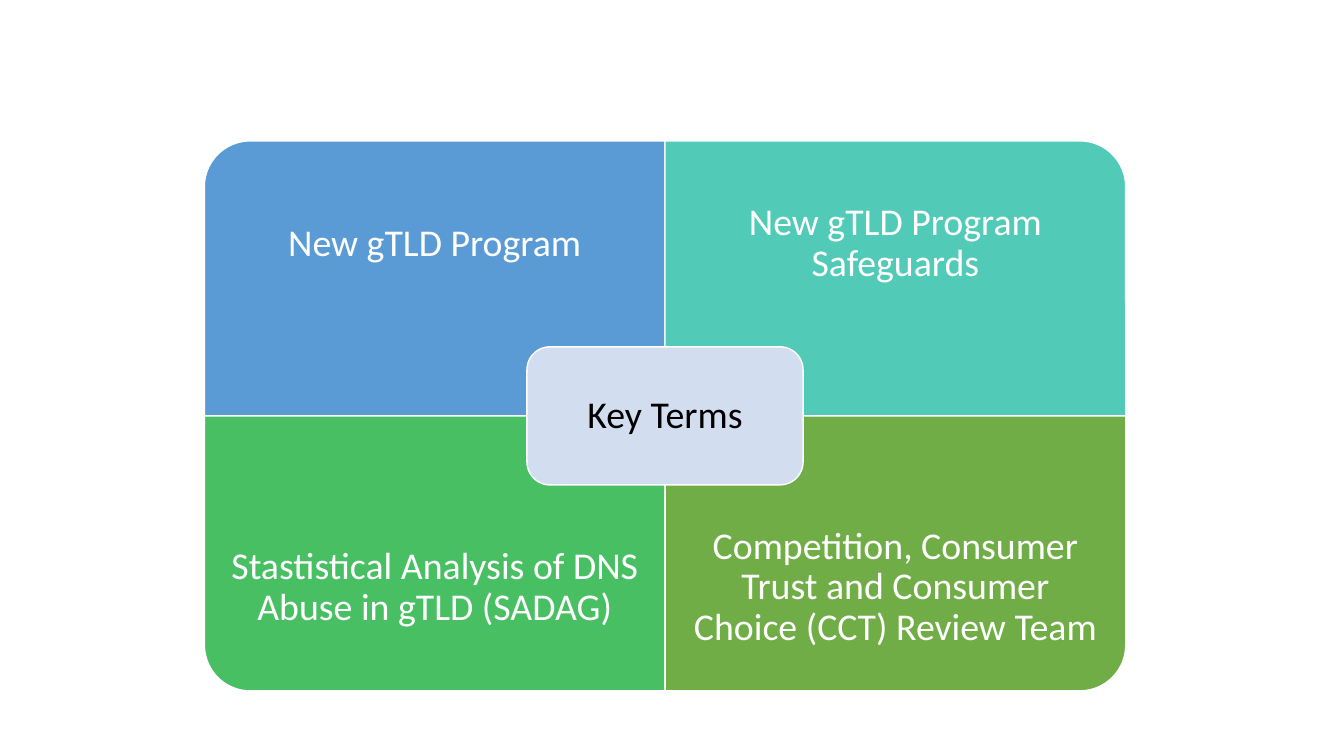
from pptx import Presentation
from pptx.dml.color import RGBColor
from pptx.enum.shapes import MSO_SHAPE as Preset
from pptx.enum.text import MSO_ANCHOR as Anchor, PP_ALIGN as Align
from pptx.util import Cm, Pt

CENTER_X, CENTER_Y = 16.76, 10.48
TILE_W, TILE_H = 11.61, 6.93
LABEL_H = 5.2
KEY_W, KEY_H = 6.96, 3.48
KEY_MARGIN = 0.17

QUADRANTS = [
    ("New gTLD Program", "5B9BD5", 0, 0, 270),
    ("New gTLD Program Safeguards", "52CAB8", 1, 0, 0),
    ("Stastistical Analysis of DNS Abuse in gTLD (SADAG)", "49BF64", 0, 1, 180),
    ("Competition, Consumer Trust and Consumer Choice (CCT) Review Team",
     "70AD47", 1, 1, 90),
]


def color(value):
    return RGBColor.from_string(value)


class SlideBuilder:
    font = "Calibri"
    size = 27
    outline = "FFFFFF"

    def __init__(self, slide):
        self.slide = slide

    def panel(self, preset, center_x, center_y, width, height, fill, rotation=0):
        if rotation % 180:
            width, height = height, width
        panel = self.slide.shapes.add_shape(
            preset, Cm(center_x - width / 2), Cm(center_y - height / 2),
            Cm(width), Cm(height))
        panel.rotation = rotation
        panel.shadow.inherit = False
        panel.fill.solid()
        panel.fill.fore_color.rgb = color(fill)
        panel.line.color.rgb = color(self.outline)
        panel.line.width = Pt(1)

    def label(self, text, left, top, width, height, inset, ink):
        box = self.slide.shapes.add_textbox(Cm(left), Cm(top), Cm(width), Cm(height))
        frame = box.text_frame
        frame.word_wrap = True
        frame.vertical_anchor = Anchor.MIDDLE
        frame.margin_left = frame.margin_right = Cm(inset)
        frame.margin_top = frame.margin_bottom = Cm(inset)
        frame.text = text
        paragraph = frame.paragraphs[0]
        paragraph.alignment = Align.CENTER
        paragraph.line_spacing = 0.9
        font = paragraph.runs[0].font
        font.name = self.font
        font.size = Pt(self.size)
        font.color.rgb = color(ink)


def main():
    deck = Presentation()
    deck.slide_width, deck.slide_height = Cm(33.87), Cm(19.05)
    builder = SlideBuilder(deck.slides.add_slide(deck.slide_layouts[6]))

    for term, fill, column, row, rotation in QUADRANTS:
        left = CENTER_X + (column - 1) * TILE_W
        top = CENTER_Y + (row - 1) * TILE_H
        builder.panel(Preset.ROUND_1_RECTANGLE, left + TILE_W / 2, top + TILE_H / 2,
                      TILE_W, TILE_H, fill, rotation)
        builder.label(term, left, top + row * (TILE_H - LABEL_H),
                      TILE_W, LABEL_H, 0.53, "FFFFFF")

    builder.panel(Preset.ROUNDED_RECTANGLE, CENTER_X, CENTER_Y, KEY_W, KEY_H, "D2DEEF")
    builder.label("Key Terms", CENTER_X - KEY_W / 2 + KEY_MARGIN,
                  CENTER_Y - KEY_H / 2 + KEY_MARGIN,
                  KEY_W - 2 * KEY_MARGIN, KEY_H - 2 * KEY_MARGIN, 0.28, "000000")

    deck.save("out.pptx")


if __name__ == "__main__":
    main()
